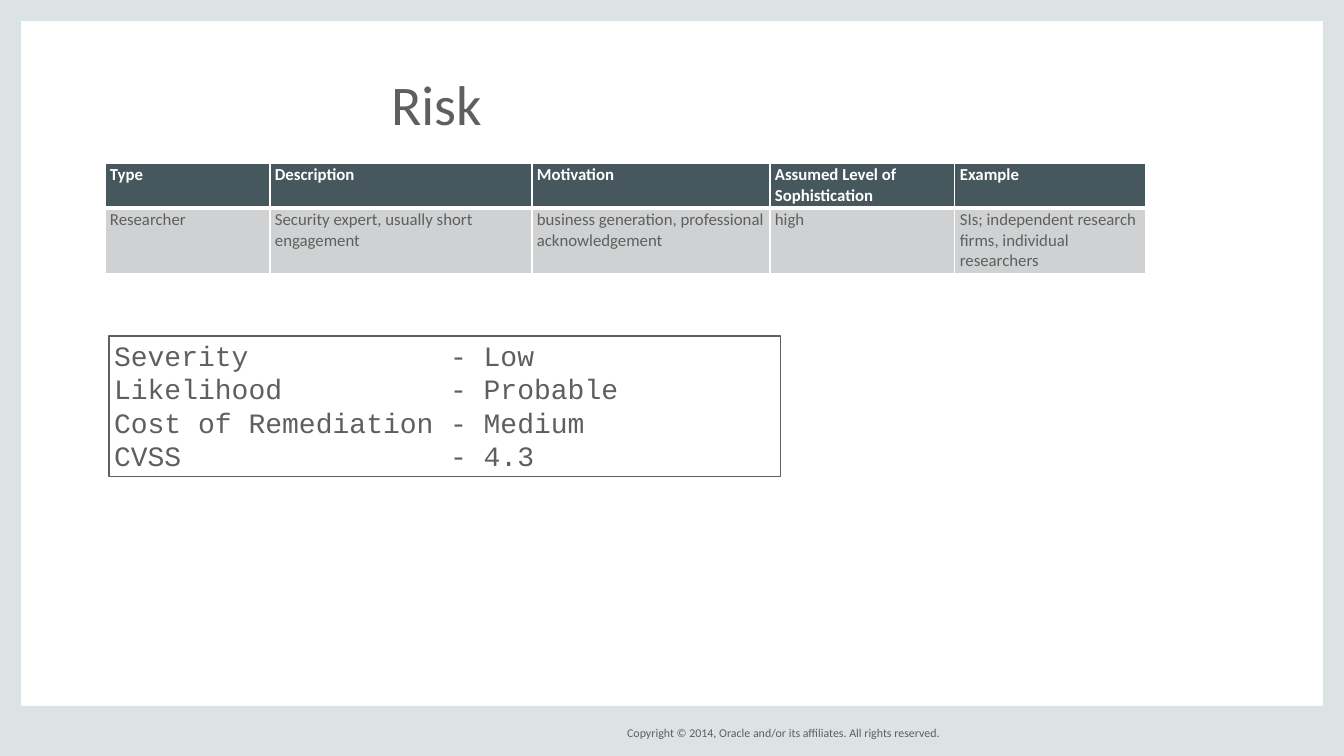
from lxml.etree import SubElement
from pptx import Presentation
from pptx.dml.color import RGBColor
from pptx.enum.shapes import MSO_SHAPE
from pptx.enum.text import MSO_ANCHOR, PP_ALIGN
from pptx.oxml.ns import qn
from pptx.util import Pt

SCALE = 914400 / 100.8
WIDTH, HEIGHT = 1344, 756
GREY, FRAME, HEADER, BODY, WHITE = "5F5F5F", "DCE3E4", "46575E", "CFD1D2", "FFFFFF"


def px(n):
    return round(n * SCALE)


def rgb(value):
    return RGBColor.from_string(value)


class Deck:
    def __init__(self):
        self.prs = Presentation()
        self.prs.slide_width, self.prs.slide_height = px(WIDTH), px(HEIGHT)
        self.s = self.prs.slides.add_slide(self.prs.slide_layouts[5])

    def add_lines(self, tf, lines, size, font="Calibri", color=GREY, bold=False,
                  align=PP_ALIGN.LEFT, tab=None):
        for i, line in enumerate(lines):
            p = tf.paragraphs[0] if i == 0 else tf.add_paragraph()
            p.alignment = align
            if tab:
                tabs = SubElement(p._p.get_or_add_pPr(), qn("a:tabLst"))
                SubElement(tabs, qn("a:tab"), pos=str(px(tab)), algn="l")
            r = p.add_run()
            r.text = line
            r.font.size, r.font.name, r.font.bold = Pt(size), font, bold
            r.font.color.rgb = rgb(color)

    def frame(self, tf, side=5, edge=2, anchor=MSO_ANCHOR.TOP):
        tf.word_wrap = True
        tf.margin_left = tf.margin_right = px(side)
        tf.margin_top = tf.margin_bottom = px(edge)
        tf.vertical_anchor = anchor

    def title(self, text, x, y, w, h):
        sp = self.s.shapes.title
        sp.left, sp.top, sp.width, sp.height = map(px, (x, y, w, h))
        self.frame(sp.text_frame)
        self.add_lines(sp.text_frame, [text], 40)

    def rect(self, x, y, w, h, fill=None, line=None):
        sp = self.s.shapes.add_shape(MSO_SHAPE.RECTANGLE, *map(px, (x, y, w, h)))
        sp.shadow.inherit = False
        if fill:
            sp.fill.solid()
            sp.fill.fore_color.rgb = rgb(fill)
        else:
            sp.fill.background()
        if line:
            sp.line.color.rgb = rgb(line)
            sp.line.width = Pt(0.75)
        else:
            sp.line.fill.background()
        return sp

    def text(self, text, x, y, w, h, size, align):
        tf = self.s.shapes.add_textbox(*map(px, (x, y, w, h))).text_frame
        self.frame(tf, 0, 0, MSO_ANCHOR.MIDDLE)
        self.add_lines(tf, [text], size, align=align)

    def borders(self, cell, **widths):
        """Draw white cell edges; widths are points keyed by L, R, T and B."""
        for side, width in widths.items():
            ln = SubElement(cell._tc.get_or_add_tcPr(), qn(f"a:ln{side}"), w=str(Pt(width)))
            SubElement(SubElement(ln, qn("a:solidFill")), qn("a:srgbClr"), val=WHITE)

    def table(self, rows, x, y, widths, heights):
        shape = self.s.shapes.add_table(len(rows), len(widths), px(x), px(y),
                                        px(sum(widths)), px(sum(heights)))
        table = shape.table
        for column, w in zip(table.columns, widths):
            column.width = px(w)
        for i, (row, h) in enumerate(zip(rows, heights)):
            table.rows[i].height = px(h)
            head = i == 0
            for j, value in enumerate(row):
                cell = table.cell(i, j)
                self.borders(cell, L=1, R=1, T=1 if head else 3, B=3 if head else 1)
                cell.fill.solid()
                cell.fill.fore_color.rgb = rgb(HEADER if head else BODY)
                cell.margin_left = cell.margin_right = px(5)
                cell.margin_top = cell.margin_bottom = px(2)
                self.add_lines(cell.text_frame, [value], 12, bold=head,
                               color=WHITE if head else GREY)


def main():
    deck = Deck()
    side, foot = 21, 50
    for box in ((0, 0, side, HEIGHT), (WIDTH - side, 0, side, HEIGHT),
                (0, HEIGHT - foot, WIDTH, foot), (0, 0, WIDTH, side)):
        deck.rect(*box, fill=FRAME)
    deck.text("Copyright © 2014, Oracle and/or its affiliates. All rights reserved.",
              593, 723, 347, 20, 8.5, PP_ALIGN.RIGHT)
    deck.title("Risk", 386, 68, 466, 73)

    ratings = [("Severity", "Low"), ("Likelihood", "Probable"),
               ("Cost of Remediation", "Medium"), ("CVSS", "4.3")]
    tf = deck.rect(109, 336, 672, 141, line=GREY).text_frame
    deck.frame(tf)
    deck.add_lines(tf, [f"{name}\t- {value}" for name, value in ratings], 20,
                   font="Courier New", tab=336)

    deck.table([
        ["Type", "Description", "Motivation", "Assumed Level of Sophistication", "Example"],
        ["Researcher", "Security expert, usually short engagement",
         "business generation, professional acknowledgement", "high",
         "SIs; independent research firms, individual researchers"],
    ], 105, 163, [165, 262, 238, 185, 191], [45, 66])
    deck.prs.save("out.pptx")


if __name__ == "__main__":
    main()
